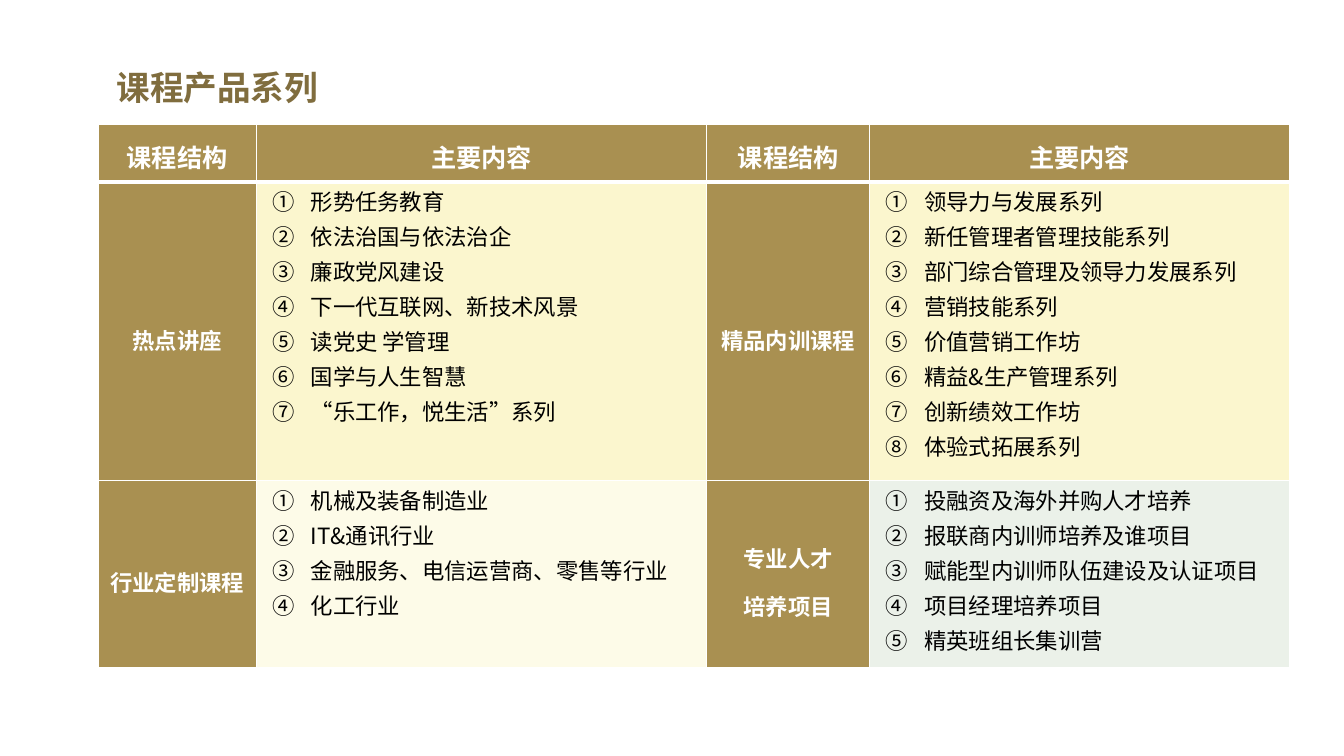
from lxml import etree
from pptx import Presentation
from pptx import util as u
from pptx.dml.color import RGBColor
from pptx.enum import text
from pptx.oxml import ns

FONT = "Noto Sans CJK SC"
GOLD, WHITE, BLACK = "A99051", "FFFFFF", "000000"
COLUMN_WIDTHS = [3.99, 11.35, 4.11, 10.57]
ROW_HEIGHTS = [1.45, 7.52, 4.7]
HEADERS = ["课程结构", "主要内容"] * 2
COURSES = [
    [
        (["热点讲座"], "FBF6CE", [
            "形势任务教育", "依法治国与依法治企", "廉政党风建设",
            "下一代互联网、新技术风景", "读党史 学管理", "国学与人生智慧",
            "“乐工作，悦生活”系列"]),
        (["精品内训课程"], "FBF6CE", [
            "领导力与发展系列", "新任管理者管理技能系列",
            "部门综合管理及领导力发展系列", "营销技能系列", "价值营销工作坊",
            "精益&生产管理系列", "创新绩效工作坊", "体验式拓展系列"]),
    ],
    [
        (["行业定制课程"], "FDFBE8", [
            "机械及装备制造业", "IT&通讯行业",
            "金融服务、电信运营商、零售等行业", "化工行业"]),
        (["专业人才", "培养项目"], "EBF1E9", [
            "投融资及海外并购人才培养", "报联商内训师培养及谁项目",
            "赋能型内训师队伍建设及认证项目", "项目经理培养项目",
            "精英班组长集训营"]),
    ],
]


def rgb(value):
    """Turn a hex string into a colour."""
    return RGBColor.from_string(value)


def style_paragraph(paragraph, size, color, bold):
    """Apply the font, size, colour and weight to every span of a paragraph."""
    for span in paragraph.runs:
        font = span.font
        font.size, font.bold, font.name = u.Pt(size), bold, FONT
        font.color.rgb = rgb(color)
        etree.SubElement(font._element, ns.qn("a:ea"), typeface=FONT)


def indent(paragraph, left, hanging):
    """Give a paragraph a left margin with a hanging first line."""
    properties = paragraph._p.get_or_add_pPr()
    properties.set("marL", str(u.Cm(left)))
    properties.set("indent", str(-u.Cm(hanging)))
    return properties


def number(paragraph):
    """Number a paragraph with circled figures."""
    properties = indent(paragraph, 1.19, 0.97)
    etree.SubElement(properties, ns.qn("a:buFont"), typeface="+mj-ea")
    etree.SubElement(properties, ns.qn("a:buAutoNum"), type="circleNumDbPlain")
    tabs = etree.SubElement(properties, ns.qn("a:tabLst"))
    etree.SubElement(tabs, ns.qn("a:tab"), pos=str(u.Cm(0.74)), algn="l")


def draw_borders(cell, bottom):
    """Draw white borders around a cell."""
    properties = cell._tc.get_or_add_tcPr()
    for index, (side, width) in enumerate(zip("LRTB", (1, 1, 1, bottom))):
        line = etree.Element(ns.qn(f"a:ln{side}"), w=str(u.Pt(width)))
        fill = etree.SubElement(line, ns.qn("a:solidFill"))
        etree.SubElement(fill, ns.qn("a:srgbClr"), val=WHITE)
        properties.insert(index, line)


def fill_cell(cell, lines, color, bottom=1):
    """Write lines into a cell and set its fill, margins and borders."""
    cell.text_frame.text = "\n".join(lines)
    cell.margin_left = cell.margin_right = u.Cm(0.18)
    cell.margin_top = cell.margin_bottom = 0
    cell.fill.solid()
    cell.fill.fore_color.rgb = rgb(color)
    draw_borders(cell, bottom)
    return cell.text_frame.paragraphs


def add_header(cell, label):
    """Fill a column heading."""
    cell.vertical_anchor = text.MSO_ANCHOR.MIDDLE
    for paragraph in fill_cell(cell, [label], GOLD, bottom=3):
        paragraph.alignment = text.PP_ALIGN.CENTER
        paragraph.line_spacing = 1.15
        style_paragraph(paragraph, 18, WHITE, True)


def add_category(cell, lines):
    """Fill a course category cell."""
    cell.vertical_anchor = text.MSO_ANCHOR.MIDDLE
    for paragraph in fill_cell(cell, lines, GOLD):
        indent(paragraph, 0.97, 0.97)
        paragraph.alignment = text.PP_ALIGN.CENTER
        paragraph.line_spacing = 1.5
        style_paragraph(paragraph, 16, WHITE, True)


def add_topics(cell, topics, color):
    """Fill a cell with a numbered list of topics."""
    for paragraph in fill_cell(cell, topics, color):
        number(paragraph)
        paragraph.alignment = text.PP_ALIGN.JUSTIFY
        paragraph.line_spacing = u.Pt(25)
        style_paragraph(paragraph, 16, BLACK, False)


def add_course_table(page):
    """Add the table of course series."""
    frame = page.shapes.add_table(
        len(ROW_HEIGHTS), len(COLUMN_WIDTHS), u.Cm(2.47), u.Cm(3.14),
        u.Cm(sum(COLUMN_WIDTHS)), u.Cm(sum(ROW_HEIGHTS)))
    table = frame.table
    table.first_row = table.horz_banding = False
    for column, width in zip(table.columns, COLUMN_WIDTHS):
        column.width = u.Cm(width)
    for row, height in zip(table.rows, ROW_HEIGHTS):
        row.height = u.Cm(height)
    for index, label in enumerate(HEADERS):
        add_header(table.cell(0, index), label)
    for row, courses in enumerate(COURSES, start=1):
        for pair, (category, color, topics) in enumerate(courses):
            add_category(table.cell(row, 2 * pair), category)
            add_topics(table.cell(row, 2 * pair + 1), topics, color)


def add_title(page, title):
    """Add the slide title."""
    box = page.shapes.add_textbox(u.Cm(2.69), u.Cm(1.55), u.Cm(5.64), u.Cm(1.27))
    box.text_frame.text = title
    box.text_frame.word_wrap = False
    box.text_frame.auto_size = text.MSO_AUTO_SIZE.SHAPE_TO_FIT_TEXT
    style_paragraph(box.text_frame.paragraphs[0], 24, "806D3E", True)


def main():
    """Build the slide and save it."""
    deck = Presentation()
    deck.slide_width, deck.slide_height = u.Cm(33.87), u.Cm(19.05)
    page = deck.slides.add_slide(deck.slide_layouts[6])
    add_course_table(page)
    add_title(page, "课程产品系列")
    deck.save("out.pptx")


if __name__ == "__main__":
    main()
